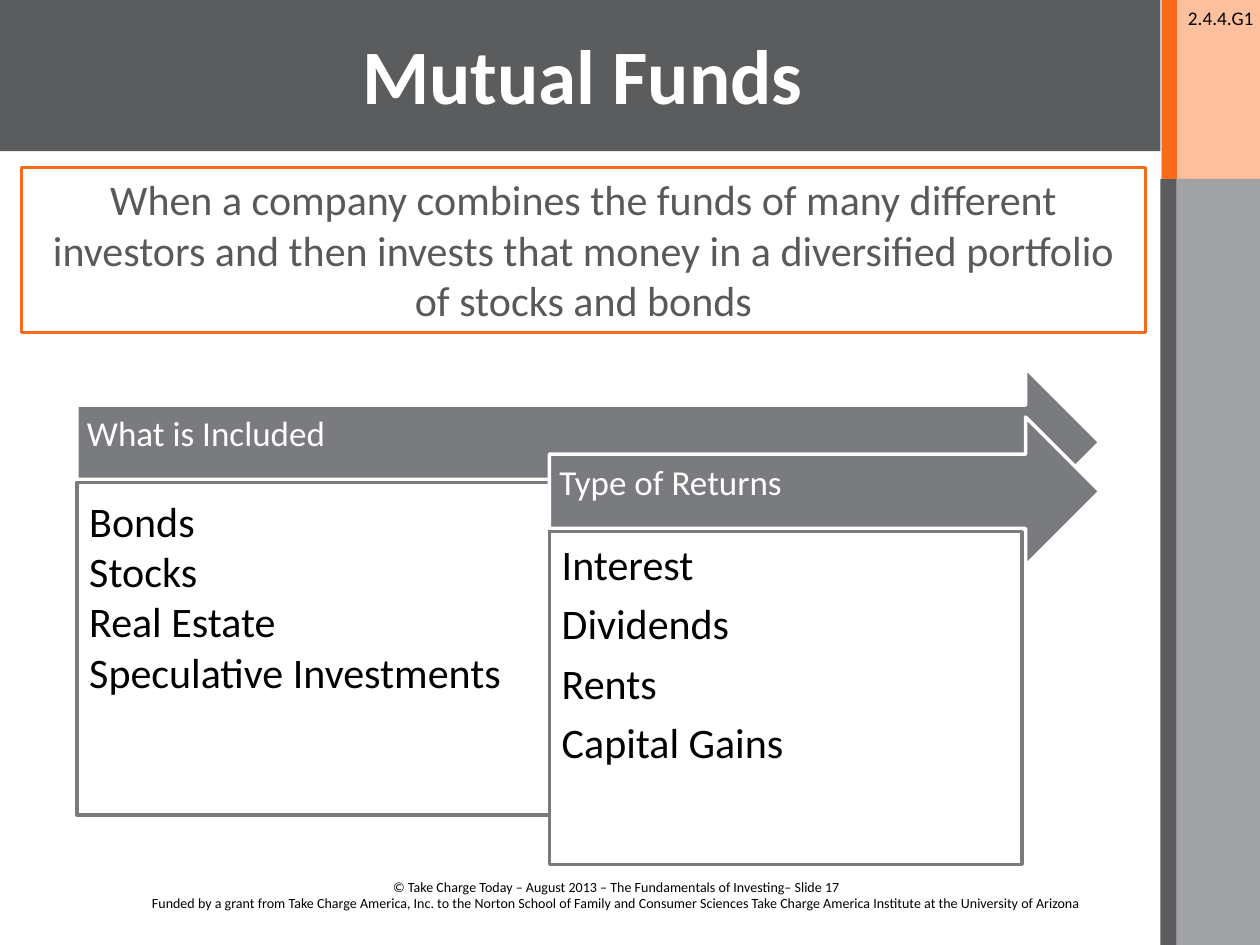
from pptx import Presentation
from pptx.dml.color import RGBColor
from pptx.enum.shapes import MSO_SHAPE as Preset
from pptx.enum.text import MSO_ANCHOR as Anchor, PP_ALIGN as Align
from pptx.oxml.ns import qn
from pptx.util import Inches, Pt
from lxml.etree import SubElement

ORANGE, PEACH = "F96A1B", "FBA676"
DARK, GRAY = "5B5C5E", "797B7E"
BLACK, WHITE, BODY = "000000", "FFFFFF", "595959"


def color(value):
    """Turn a hex string into a colour."""
    return RGBColor.from_string(value)


class SlideBuilder:
    """Hold the style and the current slide, and draw its elements."""

    font = "Calibri"
    line_width = Pt(2)

    def __init__(self, page):
        """Keep the slide to draw on."""
        self.page = page

    def fill_text(self, shape, lines, size, ink, align=Align.LEFT, anchor=Anchor.TOP,
                  insets=(0.1, 0.05, 0.1, 0.05), spacing=1.0, after=0, bold=False):
        """Fill a shape with one paragraph per line."""
        frame = shape.text_frame
        frame.word_wrap = True
        frame.vertical_anchor = anchor
        (frame.margin_left, frame.margin_top,
         frame.margin_right, frame.margin_bottom) = map(Inches, insets)
        for index, line in enumerate(lines):
            para = frame.add_paragraph() if index else frame.paragraphs[0]
            para.alignment = align
            para.line_spacing = spacing
            para.space_before = Pt(0)
            para.space_after = Pt(after)
            span = para.add_run()
            span.text = line
            span.font.name = self.font
            span.font.size = Pt(size)
            span.font.bold = bold
            span.font.color.rgb = color(ink)

    def shape(self, place, fill, line=None, preset=Preset.RECTANGLE, opacity=None):
        """Draw a filled preset shape."""
        box = self.page.shapes.add_shape(preset, *map(Inches, place))
        box.shadow.inherit = False
        box.fill.solid()
        box.fill.fore_color.rgb = color(fill)
        if opacity:
            tint = box.element.spPr.find(qn("a:solidFill"))[0]
            SubElement(tint, qn("a:alpha"), val=str(opacity * 1000))
        if line:
            box.line.color.rgb = color(line)
            box.line.width = self.line_width
        else:
            box.line.fill.background()
        return box

    def text(self, place, lines, size, **style):
        """Add a text box."""
        box = self.page.shapes.add_textbox(*map(Inches, place))
        self.fill_text(box, lines, size, BLACK, **style)

    def title(self, place, words):
        """Place the title in front of what is already drawn."""
        title = self.page.shapes.title
        title.left, title.top, title.width, title.height = map(Inches, place)
        self.fill_text(title, [words], 44, WHITE, align=Align.CENTER,
                       anchor=Anchor.MIDDLE, bold=True)
        self.page.shapes.element.append(title.element)

    def arrow_panel(self, left, top, heading, items, **style):
        """Draw a headed arrow with a list panel below its shaft."""
        arrow = self.shape((left, top, 8.73 - left, 1.18), GRAY, WHITE, Preset.RIGHT_ARROW)
        self.fill_text(arrow, [heading], 20, WHITE, anchor=Anchor.MIDDLE,
                       insets=(0.08, 0.08, 0.28, 0.19), spacing=0.9)
        panel = self.shape((left, top + 0.91, 3.75, 2.64), WHITE, GRAY)
        self.fill_text(panel, items, 24, BLACK, insets=(0.1,) * 4, **style)


def main():
    """Build the slide and save it."""
    deck = Presentation()
    deck.slide_width, deck.slide_height = Inches(10), Inches(7.5)
    slide = SlideBuilder(deck.slides.add_slide(deck.slide_layouts[5]))

    slide.shape((-0.01, 0, 9.22, 1.2), DARK)
    slide.shape((9.22, 0, 0.78, 1.42), PEACH, opacity=70)
    slide.shape((9.34, 1.42, 0.66, 6.08), GRAY, opacity=70)
    slide.shape((9.21, 1.42, 0.13, 6.08), DARK)
    slide.shape((9.22, 0, 0.12, 1.42), ORANGE)
    slide.text((9.33, 0, 0.95, 0.29), ["2.4.4.G1"], 11)
    slide.text((1.08, 6.92, 7.63, 0.37), [
        "© Take Charge Today – August 2013 – The Fundamentals of Investing– Slide 17",
        "Funded by a grant from Take Charge America, Inc. to the Norton School of Family "
        "and Consumer Sciences Take Charge America Institute at the University of Arizona",
    ], 8, align=Align.CENTER)
    slide.title((0.5, 0, 8.25, 1.17), "Mutual Funds")

    slide.arrow_panel(0.61, 2.92, "What is Included",
                      ["Bonds", "Stocks", "Real Estate", "Speculative Investments"])
    slide.arrow_panel(4.36, 3.31, "Type of Returns",
                      ["Interest", "Dividends", "Rents", "Capital Gains"],
                      spacing=0.9, after=8)

    definition = slide.shape((0.17, 1.33, 8.92, 1.31), WHITE, ORANGE)
    slide.fill_text(definition, [
        "When a company combines the funds of many different investors and then "
        "invests that money in a diversified portfolio of stocks and bonds",
    ], 24, BODY, align=Align.CENTER)

    deck.save("out.pptx")


if __name__ == "__main__":
    main()
